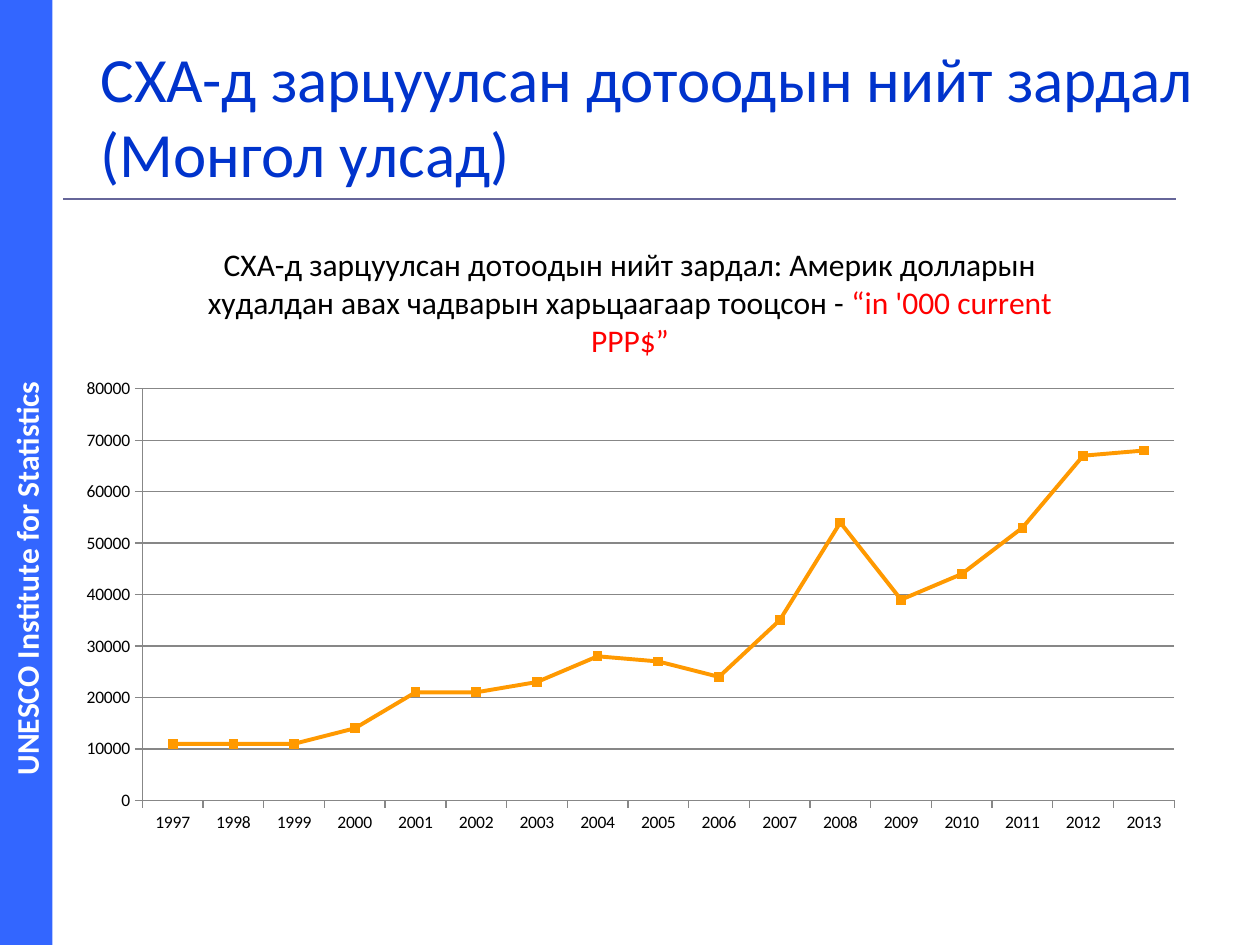
from lxml import etree
from pptx import Presentation
from pptx.chart.data import CategoryChartData
from pptx.dml.color import RGBColor
from pptx.enum.chart import XL_CHART_TYPE, XL_TICK_MARK
from pptx.enum.shapes import MSO_CONNECTOR, MSO_SHAPE
from pptx.enum.text import MSO_ANCHOR, PP_ALIGN
from pptx.oxml import parse_xml
from pptx.oxml.ns import nsdecls, qn
from pptx.util import Pt

LINE_CHART = XL_CHART_TYPE.LINE
TICK_OUT = XL_TICK_MARK.OUTSIDE
RECT = MSO_SHAPE.RECTANGLE
STRAIGHT = MSO_CONNECTOR.STRAIGHT
MIDDLE, BOTTOM = MSO_ANCHOR.MIDDLE, MSO_ANCHOR.BOTTOM
LEFT, CENTER = PP_ALIGN.LEFT, PP_ALIGN.CENTER

FONT = "Calibri"
COLORS = {
    "band": "3366FF",
    "rule": "666699",
    "title": "0033CC",
    "series": "FF9900",
    "grid": "878787",
    "accent": "FF0000",
    "text": "000000",
    "white": "FFFFFF",
}
YEARS = [str(year) for year in range(1997, 2014)]
SPENDING = [11000, 11000, 11000, 14000, 21000, 21000, 23000, 28000, 27000,
            24000, 35000, 54000, 39000, 44000, 53000, 67000, 68000]
PLOT_LAYOUT = {"x": 0.07, "y": 0.27, "w": 0.91, "h": 0.66}


def rgb(name):
    """Return the named palette colour."""
    return RGBColor.from_string(COLORS[name])


def style_font(font, size, color="text", bold=False):
    """Set the face, size, colour and weight of a font."""
    font.name = FONT
    font.size = Pt(size)
    font.bold = bold
    font.color.rgb = rgb(color)


def add_text(slide, text, box, size, color, bold=False, align=LEFT,
             anchor=MIDDLE, vert=None):
    """Add a wrapped text box in the given box."""
    tf = slide.shapes.add_textbox(*map(Pt, box)).text_frame
    tf.word_wrap = True
    tf.vertical_anchor = anchor
    if vert:
        tf._txBody.bodyPr.set("vert", vert)
    p = tf.paragraphs[0]
    p.alignment = align
    r = p.add_run()
    r.text = text
    style_font(r.font, size, color, bold)


def add_sidebar(slide, left, top, width, height):
    """Add the coloured band with the upward-reading institute name."""
    sp = slide.shapes.add_shape(RECT, Pt(left), Pt(top), Pt(width), Pt(height))
    sp.shadow.inherit = False
    sp.fill.solid()
    sp.fill.fore_color.rgb = rgb("band")
    sp.line.fill.background()
    add_text(slide, "UNESCO Institute for Statistics",
             (left, top + 147, width, 367), 18, "white", bold=True,
             align=CENTER, vert="vert270")


def add_header(slide, left, top, width, height):
    """Add the slide title and the rule under it."""
    add_text(slide, "СХА-д зарцуулсан дотоодын нийт зардал (Монгол улсад)",
             (left + 14.4, top, width + 12, height), 36, "title", anchor=BOTTOM)
    y = Pt(top + height + 1.5)
    rule = slide.shapes.add_connector(STRAIGHT, Pt(left), y, Pt(left + width), y)
    rule.line.color.rgb = rgb("rule")
    rule.line.width = Pt(1.5)
    etree.SubElement(rule._element.spPr, qn("a:effectLst"))


def set_plot_layout(chart):
    """Fix the inner plot area as fractions of the chart."""
    area = chart._chartSpace.chart.plotArea
    for old in area.findall(qn("c:layout")):
        area.remove(old)
    modes = "".join(f'<c:{k}Mode val="edge"/>' for k in "xy")
    sizes = "".join(f'<c:{k} val="{v}"/>' for k, v in PLOT_LAYOUT.items())
    area.insert(0, parse_xml(
        f'<c:layout {nsdecls("c")}><c:manualLayout>'
        f'<c:layoutTarget val="inner"/>{modes}{sizes}'
        '</c:manualLayout></c:layout>'))


def add_spending_chart(slide, left, top, width, height):
    """Add the titled line chart of yearly spending."""
    data = CategoryChartData(number_format="General")
    data.categories = YEARS
    data.add_series("Series 1", SPENDING)
    chart = slide.shapes.add_chart(LINE_CHART, Pt(left), Pt(top), Pt(width),
                                   Pt(height), data).chart
    style_font(chart.font, 10)
    chart.has_legend = False
    chart.has_title = True
    p = chart.chart_title.text_frame.paragraphs[0]
    for text, color in (
            ("СХА-д зарцуулсан дотоодын нийт зардал: Америк долларын "
             "худалдан авах чадварын харьцаагаар тооцсон - ", "text"),
            ("“in '000 current PPP$”", "accent")):
        r = p.add_run()
        r.text = text
        style_font(r.font, 18, color)
    for axis in (chart.category_axis, chart.value_axis):
        axis.major_tick_mark = TICK_OUT
        axis.format.line.color.rgb = rgb("grid")
        axis.format.line.width = Pt(0.75)
    axis = chart.value_axis
    axis.minimum_scale, axis.maximum_scale, axis.major_unit = 0, 80000, 10000
    axis.has_major_gridlines = True
    axis.major_gridlines.format.line.color.rgb = rgb("grid")
    axis.major_gridlines.format.line.width = Pt(0.75)
    chart.plots[0].vary_by_categories = False
    series = chart.plots[0].series[0]
    series.smooth = False
    series.marker.style = None
    series.format.line.color.rgb = rgb("series")
    series.format.line.width = Pt(2.25)
    set_plot_layout(chart)


def main():
    """Build and save the slide."""
    prs = Presentation()
    prs.slide_width, prs.slide_height = Pt(720), Pt(540)
    slide = prs.slides.add_slide(prs.slide_layouts[6])
    add_sidebar(slide, 0, 0, 30, 540)
    add_header(slide, 36, 22.3, 636, 90)
    add_spending_chart(slide, 36, 126, 648, 356.4)
    prs.save("out.pptx")


if __name__ == "__main__":
    main()
